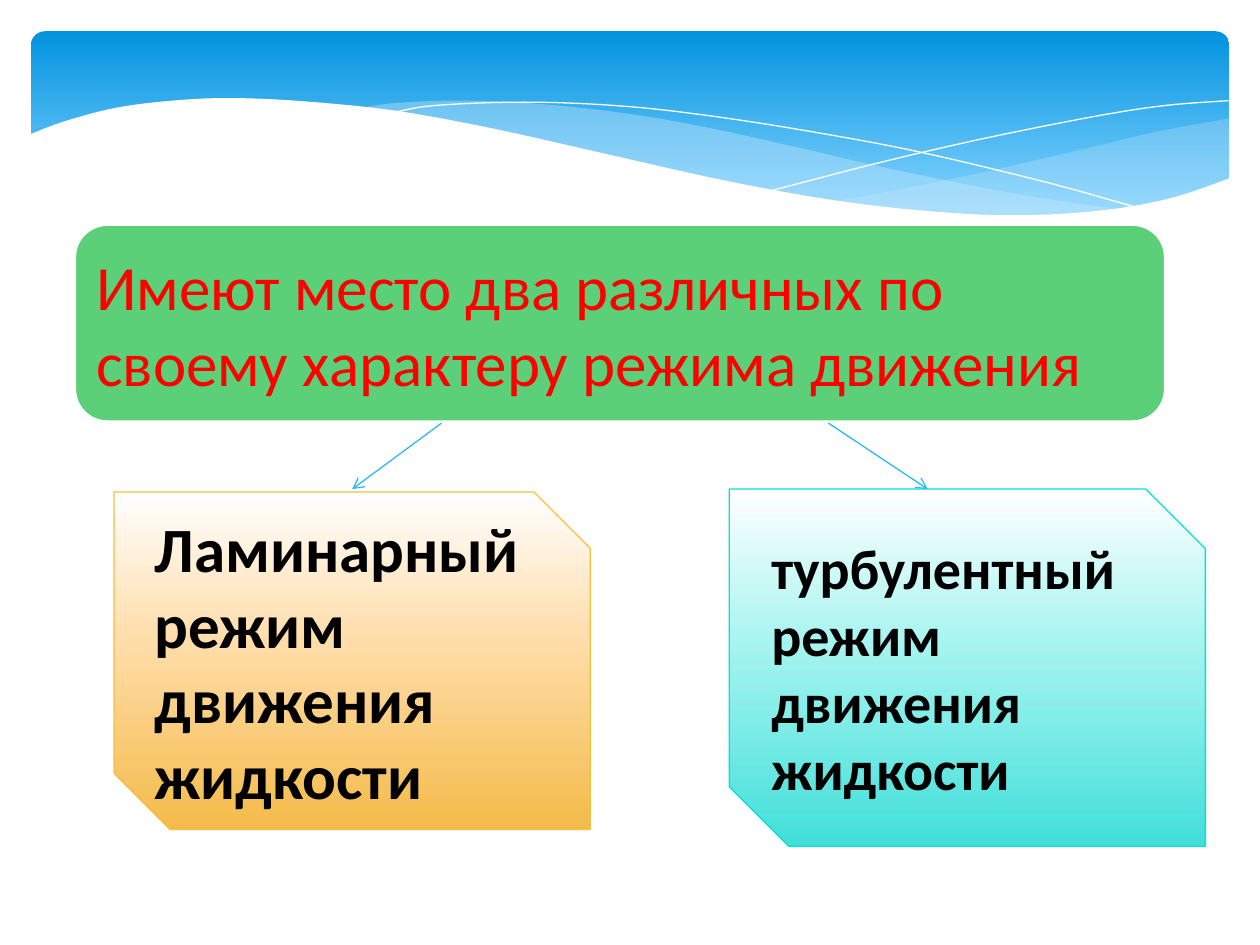
from copy import deepcopy
from dataclasses import dataclass

from lxml import etree
from pptx import Presentation, util as u
from pptx.dml.color import RGBColor
from pptx.enum import shapes, text
from pptx.oxml.ns import qn


@dataclass(frozen=True)
class Theme:
    font: str = "Calibri"
    large: int = 36
    medium: int = 32
    white: str = "FFFFFF"
    black: str = "000000"
    red: str = "FF0000"
    green: str = "5BD078"
    wave: str = "C6E7FC"
    arrow: str = "31B6FD"
    amber_line: str = "F5C040"
    teal_line: str = "05E0DB"
    sky: tuple = ((0, "0293E0"), (0.9, "83D3FE"))
    amber: tuple = ((0, "FFFFFF"), (0.44, "FFDDAA"), (1, "F4BB4A"))
    teal: tuple = ((0, "FFFFFF"), (0.44, "A5F4F0"), (1, "42DFD9"))


def smooth(points, steps=6):
    """Points along a Catmull-Rom curve through the given points."""
    ends = [points[0], *points, points[-1]]
    curve = [points[0]]
    for a, b, c, d in zip(ends, ends[1:], ends[2:], ends[3:]):
        for i in range(1, steps + 1):
            t = i / steps
            curve.append(tuple(
                (2 * q + (r - p) * t + (2 * p - 5 * q + 4 * r - s) * t ** 2
                 + (3 * q - p - 3 * r + s) * t ** 3) / 2
                for p, q, r, s in zip(a, b, c, d)))
    return curve


class SlideBuilder:
    def __init__(self, slide, theme):
        self.slide, self.theme = slide, theme

    def paint(self, sp, fill=None, line=None, width=0.75, alpha=None):
        """Fill with one colour, or downwards with (position, colour) stops."""
        sp.shadow.inherit = False
        if fill is None:
            sp.fill.background()
        elif isinstance(fill, str):
            sp.fill.solid()
            sp.fill.fore_color.rgb = RGBColor.from_string(fill)
        else:
            sp.fill.gradient()
            sp.fill.gradient_angle = 270
            stop_list = sp._element.spPr.find(".//" + qn("a:gsLst"))
            for _ in fill[2:]:
                stop_list.append(deepcopy(stop_list[-1]))
            for stop, (position, color) in zip(sp.fill.gradient_stops, fill):
                stop.position = position
                stop.color.rgb = RGBColor.from_string(color)
        if alpha is not None:
            color = sp._element.spPr.find(qn("a:solidFill"))[0]
            etree.SubElement(color, qn("a:alpha"), val=str(alpha * 1000))
        if line is None:
            sp.line.fill.background()
        else:
            sp.line.color.rgb = RGBColor.from_string(line)
            sp.line.width = u.Pt(width)

    def shape(self, kind, box, adjust=None, **look):
        sp = self.slide.shapes.add_shape(kind, *map(u.Cm, box))
        if adjust is not None:
            sp.adjustments[0] = adjust
        self.paint(sp, **look)
        return sp

    def block(self, kind, box, words, size, color, bold=False, **look):
        """A shape with left-aligned text, centred vertically."""
        tf = self.shape(kind, box, **look).text_frame
        tf.word_wrap = True
        tf.vertical_anchor = text.MSO_ANCHOR.MIDDLE
        p = tf.paragraphs[0]
        p.alignment = text.PP_ALIGN.LEFT
        r = p.add_run()
        r.text = words
        style = {"name": self.theme.font, "size": u.Pt(size), "bold": bold}
        for name, value in style.items():
            setattr(r.font, name, value)
        r.font.color.rgb = RGBColor.from_string(color)

    def outline(self, points, close=True, **look):
        start, *rest = [(u.Cm(x), u.Cm(y)) for x, y in points]
        builder = self.slide.shapes.build_freeform(*start)
        builder.add_line_segments(rest, close=close)
        self.paint(builder.convert_to_shape(), **look)

    def arrow(self, start, end):
        line = self.slide.shapes.add_connector(
            shapes.MSO_CONNECTOR.STRAIGHT, *map(u.Cm, (*start, *end)))
        line.line.color.rgb = RGBColor.from_string(self.theme.arrow)
        line.line.width = u.Pt(0.75)
        etree.SubElement(line.line._get_or_add_ln(), qn("a:tailEnd"), type="arrow")
        etree.SubElement(line._element.spPr, qn("a:effectLst"))


RIGHT_WAVE_TOP = [(24.79, 2.39), (23.39, 2.64), (21.87, 3), (19.79, 3.48),
                  (17.93, 3.86), (16.79, 4.06)]
RIGHT_WAVE_BOTTOM = [(16.79, 4.06), (18.26, 4.24), (19.84, 4.37), (21.21, 4.37),
                     (22.58, 4.22), (23.75, 3.96), (24.79, 3.58)]
LONG_WAVE_TOP = [(22.68, 4.24), (20.5, 3.91), (17.93, 3.4), (15.98, 2.95),
                 (14.1, 2.54), (12.42, 2.26), (10.67, 2.08), (9.17, 2.03),
                 (7.95, 2.08), (7.26, 2.18)]
LONG_WAVE_BOTTOM = [(7.26, 2.18), (8.69, 2.39), (10.26, 2.69), (12.47, 3.2),
                    (14.38, 3.63), (16.1, 3.96), (17.65, 4.19), (19.33, 4.34),
                    (20.78, 4.39), (21.77, 4.34), (22.68, 4.24)]
FALLING_LINE = [(7.85, 2.29), (8.74, 2.13), (10.57, 2.06), (12.42, 2.13),
                (14.12, 2.31), (16.15, 2.62), (18.47, 3.05), (21.11, 3.68),
                (23.04, 4.22)]
RISING_LINE = [(15.57, 3.84), (17.65, 3.3), (19.71, 2.82), (22, 2.36),
               (23.47, 2.13), (24.77, 2.03)]
WHITE_EDGE = [(24.82, 3.58), (23.62, 3.99), (22.23, 4.24), (20.55, 4.34),
              (18.9, 4.27), (16.97, 4.06), (14.71, 3.66), (12.07, 3.07),
              (9.93, 2.59), (8.03, 2.24), (6.35, 2.06), (4.9, 1.98),
              (3.71, 2.01), (2.41, 2.16), (1.32, 2.44), (0.58, 2.72)]
WHITE_CORNERS = [(0.58, 5.69), (24.82, 5.69)]


def draw_banner(b):
    t = b.theme
    b.shape(shapes.MSO_SHAPE.ROUNDED_RECTANGLE, (0.63, 0.63, 24.15, 3.96),
            adjust=0.07, fill=t.sky)
    for top, bottom, alpha in ((RIGHT_WAVE_TOP, RIGHT_WAVE_BOTTOM, 29),
                               (LONG_WAVE_TOP, LONG_WAVE_BOTTOM, 40)):
        b.outline(smooth(top) + smooth(bottom), fill=t.wave, alpha=alpha)
    for curve in (FALLING_LINE, RISING_LINE):
        b.outline(smooth(curve), close=False, line=t.white, width=0)
    b.outline(smooth(WHITE_EDGE) + WHITE_CORNERS, fill=t.white)


def draw_scheme(b):
    t = b.theme
    b.block(shapes.MSO_SHAPE.ROUNDED_RECTANGLE, (1.5, 4.52, 22, 3.99),
            "Имеют место два различных по своему характеру режима движения",
            t.large, t.red, fill=t.green, line=t.white, width=2)
    snipped = shapes.MSO_SHAPE.SNIP_2_DIAG_RECTANGLE
    b.block(snipped, (2.3, 9.92, 9.6, 6.8), "Ламинарный режим движения жидкости",
            t.large, t.black, bold=True, fill=t.amber, line=t.amber_line)
    b.block(snipped, (14.7, 9.86, 9.6, 7.2), "турбулентный режим движения жидкости",
            t.medium, t.black, bold=True, fill=t.teal, line=t.teal_line)
    b.arrow((8.9, 8.53), (7.1, 9.86))
    b.arrow((16.7, 8.53), (18.7, 9.86))


def main():
    prs = Presentation()
    prs.slide_width, prs.slide_height = u.Cm(25.4), u.Cm(19.05)
    s = prs.slides.add_slide(prs.slide_layouts[6])
    b = SlideBuilder(s, Theme())
    draw_banner(b)
    draw_scheme(b)
    prs.save("out.pptx")


if __name__ == "__main__":
    main()
